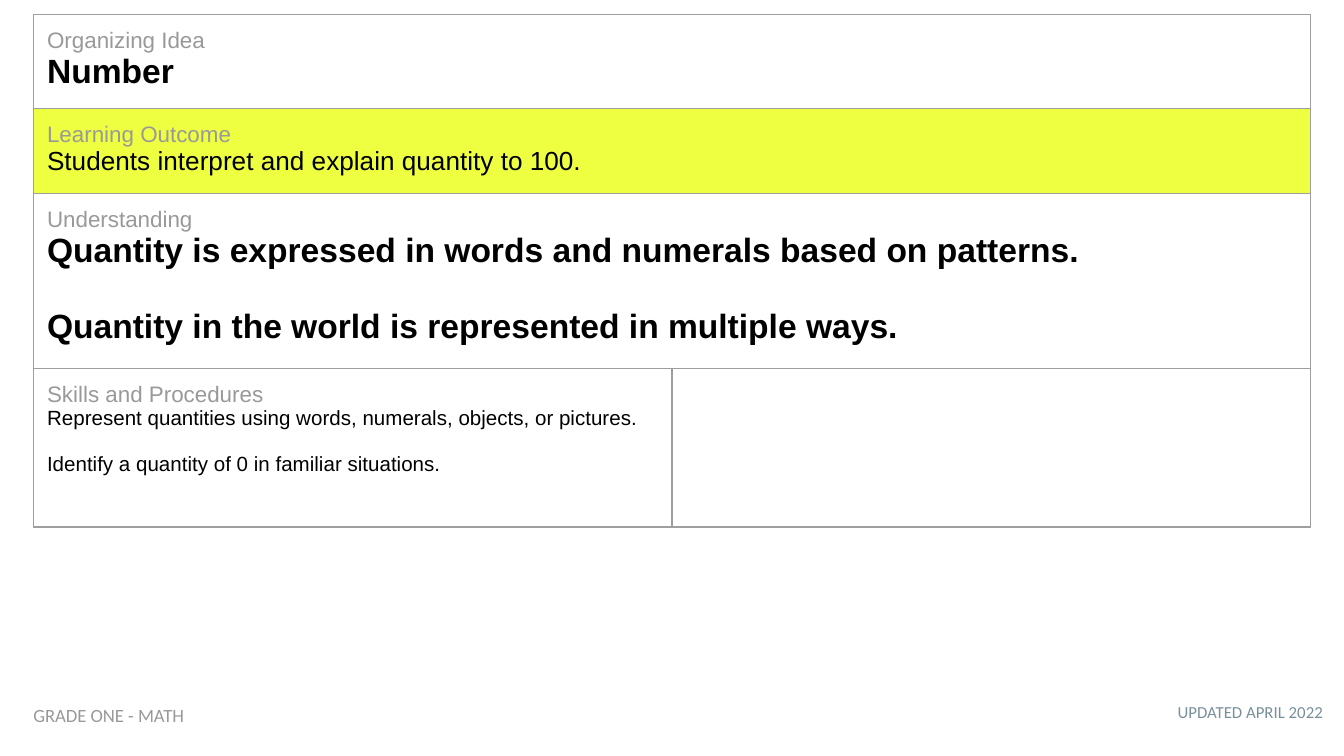
from dataclasses import dataclass

from lxml import etree
from pptx import Presentation
from pptx.dml.color import RGBColor
from pptx.enum.text import MSO_AUTO_SIZE, PP_ALIGN
from pptx.oxml.ns import qn
from pptx.util import Inches, Pt

LEFT, RIGHT = PP_ALIGN.LEFT, PP_ALIGN.RIGHT
GROW = MSO_AUTO_SIZE.SHAPE_TO_FIT_TEXT
BLANK_LAYOUT = 6
WIDTH = 10
HEIGHT = WIDTH * 9 / 16
INSET = Inches(0.1)


@dataclass(frozen=True)
class Theme:
    ink: str = "000000"
    label: str = "999999"
    date: str = "78909C"
    highlight: str = "EEFF41"
    border: str = "9E9E9E"
    border_width: float = 0.75
    body_font: str = "Arial"
    footer_font: str = "Calibri"
    label_size: int = 12
    heading_size: int = 18
    outcome_size: int = 14
    skill_size: int = 11
    footer_size: int = 10
    date_size: int = 9
    line_height: float = 1.15


def write(para, text, *, font, size, color, bold=False, align=LEFT, gap=0):
    """Put one formatted span in a paragraph, with a gap in points above it."""
    para.alignment = align
    para.space_before = Pt(gap)
    span = para.add_run()
    span.text = text
    span.font.name = font
    span.font.size = Pt(size)
    span.font.bold = bold
    span.font.color.rgb = RGBColor.from_string(color)


class SlideBuilder:
    def __init__(self, page, theme):
        self.page = page
        self.theme = theme

    def footer(self, text, left, top, width, height, **style):
        """Add a footer box, placed in shares of the slide's size."""
        box = self.page.shapes.add_textbox(
            Inches(left * WIDTH), Inches(top * HEIGHT),
            Inches(width * WIDTH), Inches(height * HEIGHT))
        frame = box.text_frame
        frame.word_wrap = True
        frame.auto_size = GROW
        frame.margin_left = frame.margin_right = INSET
        frame.margin_top = frame.margin_bottom = INSET
        write(frame.paragraphs[0], text, font=self.theme.footer_font, **style)

    def table(self, left, top, width, row_heights, columns):
        """Add a bordered table with equal columns and no banding."""
        frame = self.page.shapes.add_table(
            len(row_heights), columns, Inches(left * WIDTH), Inches(top * HEIGHT),
            Inches(width * WIDTH), Inches(sum(row_heights)))
        table = frame.table
        table.first_row = table.horz_banding = False
        for row, height in zip(table.rows, row_heights):
            row.height = Inches(height)
            for cell in row.cells:
                cell.margin_left = cell.margin_right = INSET
                cell.margin_top = cell.margin_bottom = INSET
                cell.fill.background()
                self.borders(cell)
        return table

    def borders(self, cell):
        properties = cell._tc.get_or_add_tcPr()
        for index, side in enumerate(("a:lnL", "a:lnR", "a:lnT", "a:lnB")):
            line = etree.Element(qn(side), w=str(Pt(self.theme.border_width)))
            fill = etree.SubElement(line, qn("a:solidFill"))
            etree.SubElement(fill, qn("a:srgbClr"), val=self.theme.border)
            properties.insert(index, line)

    def entry(self, cell, label, lines, size, bold=False):
        """Fill a cell with a grey label and its lines.

        A single line shares the label's paragraph after a line break; several
        lines are paragraphs set one line apart.
        """
        theme = self.theme
        frame = cell.text_frame
        first = frame.paragraphs[0]
        write(first, label, font=theme.body_font,
              size=theme.label_size, color=theme.label)
        if len(lines) == 1:
            first.add_line_break()
        for index, line in enumerate(lines):
            para = first if len(lines) == 1 else frame.add_paragraph()
            write(para, line, font=theme.body_font, size=size,
                  color=theme.ink, bold=bold,
                  gap=size * theme.line_height if index else 0)


def main():
    theme = Theme()
    deck = Presentation()
    deck.slide_width, deck.slide_height = Inches(WIDTH), Inches(HEIGHT)
    page = deck.slides.add_slide(deck.slide_layouts[BLANK_LAYOUT])
    builder = SlideBuilder(page, theme)

    # Update date
    builder.footer("UPDATED APRIL 2022", 0.724, 0.915, 0.27, 0.062,
                   size=theme.date_size, color=theme.date, align=RIGHT)

    # Curriculum table: every row but the last spans both columns
    entries = [
        ("Organizing Idea", ["Number"], theme.heading_size, True),
        ("Learning Outcome", ["Students interpret and explain quantity to 100."],
         theme.outcome_size, False),
        ("Understanding",
         ["Quantity is expressed in words and numerals based on patterns.",
          "Quantity in the world is represented in multiple ways."],
         theme.heading_size, True),
        ("Skills and Procedures",
         ["Represent quantities using words, numerals, objects, or pictures.",
          "Identify a quantity of 0 in familiar situations."],
         theme.skill_size, False),
    ]
    table = builder.table(0.025, 0.019, 0.95, [0.7, 0.63, 1.3, 1.18], columns=2)
    for row, (label, lines, size, bold) in enumerate(entries):
        cell = table.cell(row, 0)
        if row < len(entries) - 1:
            cell.merge(table.cell(row, 1))
        builder.entry(cell, label, lines, size, bold)
    outcome = table.cell(1, 0)
    outcome.fill.solid()
    outcome.fill.fore_color.rgb = RGBColor.from_string(theme.highlight)

    # Grade and subject
    builder.footer("GRADE ONE - MATH", 0.015, 0.916, 0.3, 0.066,
                   size=theme.footer_size, color=theme.label)

    deck.save("out.pptx")


if __name__ == "__main__":
    main()
